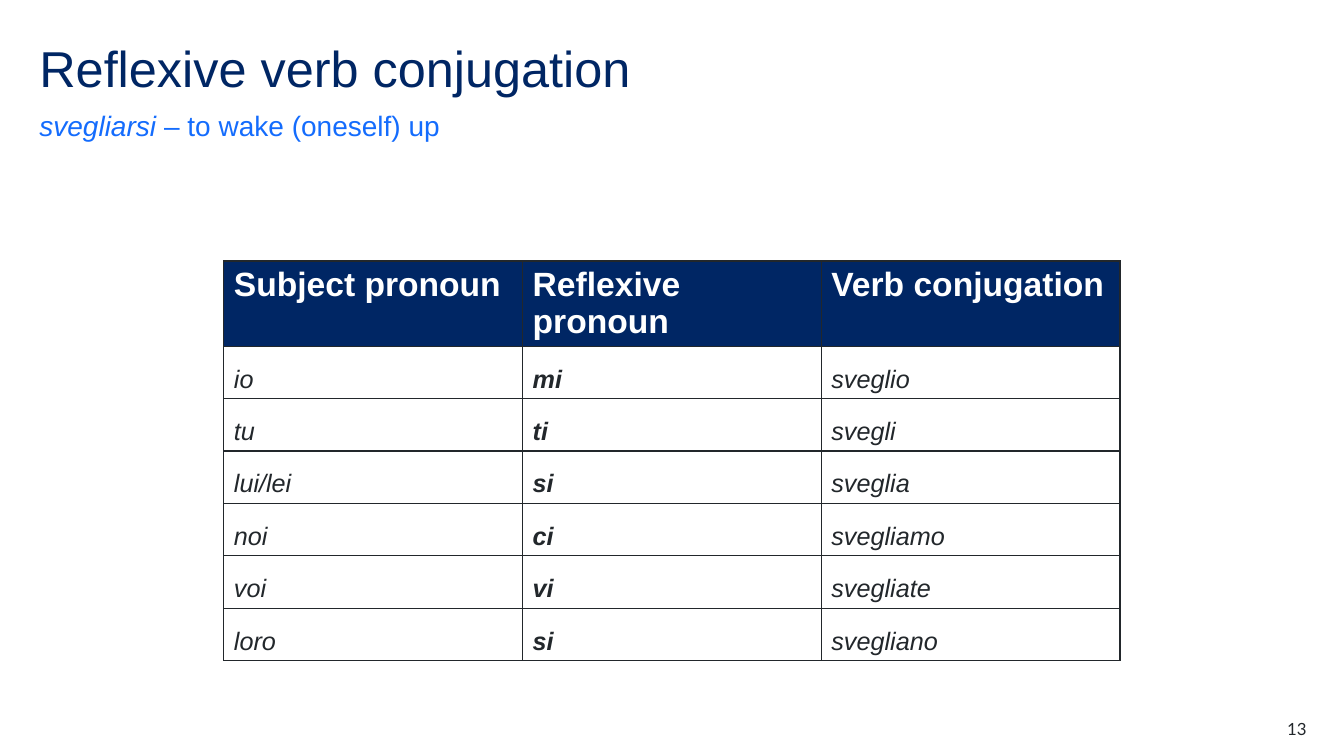
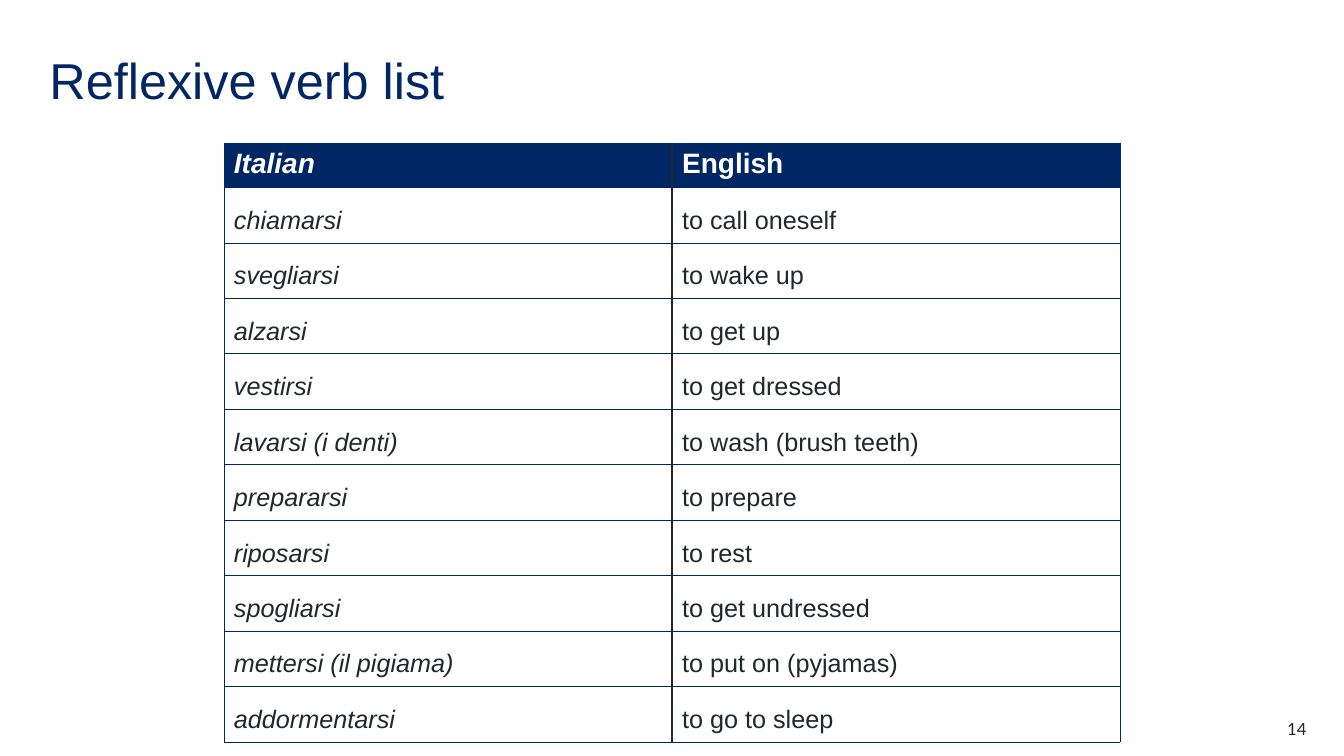
from lxml import etree
from pptx import Presentation
from pptx import util as u
from pptx.dml.color import RGBColor
from pptx.enum import text
from pptx.oxml import ns

COLORS = {"navy": "002664", "blue": "146CFD", "ink": "22272B", "white": "FFFFFF"}
FONT, NUMBER_FONT = "Arial", "Lato"
LEFT, WIDTH = 0.39, 12.56
TABLE_LEFT, TABLE_WIDTH = 2.22, 8.89
INK_LINE, NAVY_LINE = ("ink", 1), ("navy", 0.5)

CONJUGATION = {
    "title": "Reflexive verb conjugation",
    "title_box": {"height": 0.6, "inset": 0, "spacing": 0.9},
    "subtitle": [("svegliarsi", True), (" – to wake (oneself) up", False)],
    "number": 13,
    "top": 2.59,
    "heights": (0.84, 0.52),
    "header_size": 24,
    "header_italic": (False, False, False),
    "body_italic": (True, True, True),
    "body_bold": (False, True, False),
    "space_after": 12,
    "outer": INK_LINE,
    "rule": INK_LINE,
    "rows": [
        ("Subject pronoun", "Reflexive pronoun", "Verb conjugation"),
        ("io", "mi", "sveglio"),
        ("tu", "ti", "svegli"),
        ("lui/lei", "si", "sveglia"),
        ("noi", "ci", "svegliamo"),
        ("voi", "vi", "svegliate"),
        ("loro", "si", "svegliano"),
    ],
}
VERB_LIST = {
    "title": "Reflexive verb list",
    "title_box": {"height": 0.71, "inset": 0.1, "spacing": 1.0},
    "subtitle": [],
    "number": 14,
    "top": 1.42,
    "heights": (0.44, 0.55),
    "header_size": 20,
    "header_italic": (True, False),
    "body_italic": (True, False),
    "body_bold": (False, False),
    "space_after": 0,
    "outer": NAVY_LINE,
    "rule": NAVY_LINE,
    "rows": [
        ("Italian", "English"),
        ("chiamarsi", "to call oneself"),
        ("svegliarsi", "to wake up"),
        ("alzarsi", "to get up"),
        ("vestirsi", "to get dressed"),
        ("lavarsi (i denti)", "to wash (brush teeth)"),
        ("prepararsi", "to prepare"),
        ("riposarsi", "to rest"),
        ("spogliarsi", "to get undressed"),
        ("mettersi (il pigiama)", "to put on (pyjamas)"),
        ("addormentarsi", "to go to sleep"),
    ],
}


def add_run(paragraph, words, size, color, bold=False, italic=False, font=FONT):
    run = paragraph.add_run()
    run.text = words
    run.font.name, run.font.size = font, u.Pt(size)
    run.font.bold, run.font.italic = bold, italic
    run.font.color.rgb = RGBColor.from_string(COLORS[color])


def set_frame(shape, left, top, width, height, anchor, inset=0, inset_top=0):
    shape.left, shape.top = u.Inches(left), u.Inches(top)
    shape.width, shape.height = u.Inches(width), u.Inches(height)
    frame = shape.text_frame
    frame.word_wrap = True
    frame.auto_size = text.MSO_AUTO_SIZE.NONE
    frame.vertical_anchor = anchor
    frame.margin_left = frame.margin_right = u.Inches(inset)
    frame.margin_top, frame.margin_bottom = u.Inches(inset_top), u.Inches(inset / 2)
    paragraph = frame.paragraphs[0]
    paragraph.alignment = text.PP_ALIGN.LEFT
    paragraph.space_before = u.Pt(0)
    return paragraph


def add_title(slide, title, height, inset, spacing):
    paragraph = set_frame(slide.shapes.title, LEFT, 0.39, WIDTH, height,
                          text.MSO_ANCHOR.TOP, inset, inset / 2 + 0.05)
    paragraph.line_spacing = spacing
    add_run(paragraph, title, 36, "navy")


def add_subtitle(slide, phrases):
    paragraph = set_frame(slide.placeholders[1], LEFT, 1.07, WIDTH, 0.34,
                          text.MSO_ANCHOR.BOTTOM)
    paragraph.line_spacing, paragraph.space_after = 1.5, u.Pt(12)
    properties = paragraph._p.get_or_add_pPr()
    properties.set("marL", "0")
    properties.set("indent", "0")
    etree.SubElement(properties, ns.qn("a:buNone"))
    for words, italic in phrases:
        add_run(paragraph, words, 20, "blue", italic=italic)


def add_number(slide, number):
    box = slide.shapes.add_textbox(0, 0, 0, 0)
    paragraph = set_frame(box, 12.17, 7.13, 0.79, 0.2, text.MSO_ANCHOR.TOP)
    paragraph.alignment = text.PP_ALIGN.RIGHT
    add_run(paragraph, str(number), 12, "ink", font=NUMBER_FONT)


def set_borders(cell, sides):
    properties = cell._tc.get_or_add_tcPr()
    for place, side in enumerate("LRTB"):
        color, points = sides[side]
        line = etree.Element(ns.qn(f"a:ln{side}"), w=str(int(u.Pt(points))))
        fill = etree.SubElement(line, ns.qn("a:solidFill"))
        etree.SubElement(fill, ns.qn("a:srgbClr"), val=COLORS[color])
        properties.insert(place, line)


def add_grid(slide, content):
    rows = content["rows"]
    columns = len(rows[0])
    header_height, row_height = content["heights"]
    height = header_height + row_height * (len(rows) - 1)
    table = slide.shapes.add_table(
        len(rows), columns, u.Inches(TABLE_LEFT), u.Inches(content["top"]),
        u.Inches(TABLE_WIDTH), u.Inches(height)).table
    table.horz_banding = False
    for column in table.columns:
        column.width = u.Inches(TABLE_WIDTH / columns)
    for r, row in enumerate(rows):
        header = r == 0
        table.rows[r].height = u.Inches(header_height if header else row_height)
        for c, words in enumerate(row):
            cell = table.cell(r, c)
            paragraph = cell.text_frame.paragraphs[0]
            if header:
                cell.fill.solid()
                cell.fill.fore_color.rgb = RGBColor.from_string(COLORS["navy"])
                add_run(paragraph, words, content["header_size"], "white",
                        True, content["header_italic"][c])
            else:
                cell.fill.background()
                paragraph.line_spacing = 1.5
                paragraph.space_after = u.Pt(content["space_after"])
                add_run(paragraph, words, 18, "ink",
                        content["body_bold"][c], content["body_italic"][c])
            set_borders(cell, {
                "L": content["outer"] if c == 0 else INK_LINE,
                "R": content["outer"] if c == columns - 1 else INK_LINE,
                "T": content["rule"],
                "B": content["rule"],
            })


def main():
    deck = Presentation()
    deck.slide_width, deck.slide_height = u.Inches(13.33), u.Inches(7.5)
    for content in (CONJUGATION, VERB_LIST):
        layout = deck.slide_layouts[1 if content["subtitle"] else 5]
        slide = deck.slides.add_slide(layout)
        add_title(slide, content["title"], **content["title_box"])
        if content["subtitle"]:
            add_subtitle(slide, content["subtitle"])
        add_grid(slide, content)
        add_number(slide, content["number"])
    deck.save("out.pptx")


if __name__ == "__main__":
    main()
